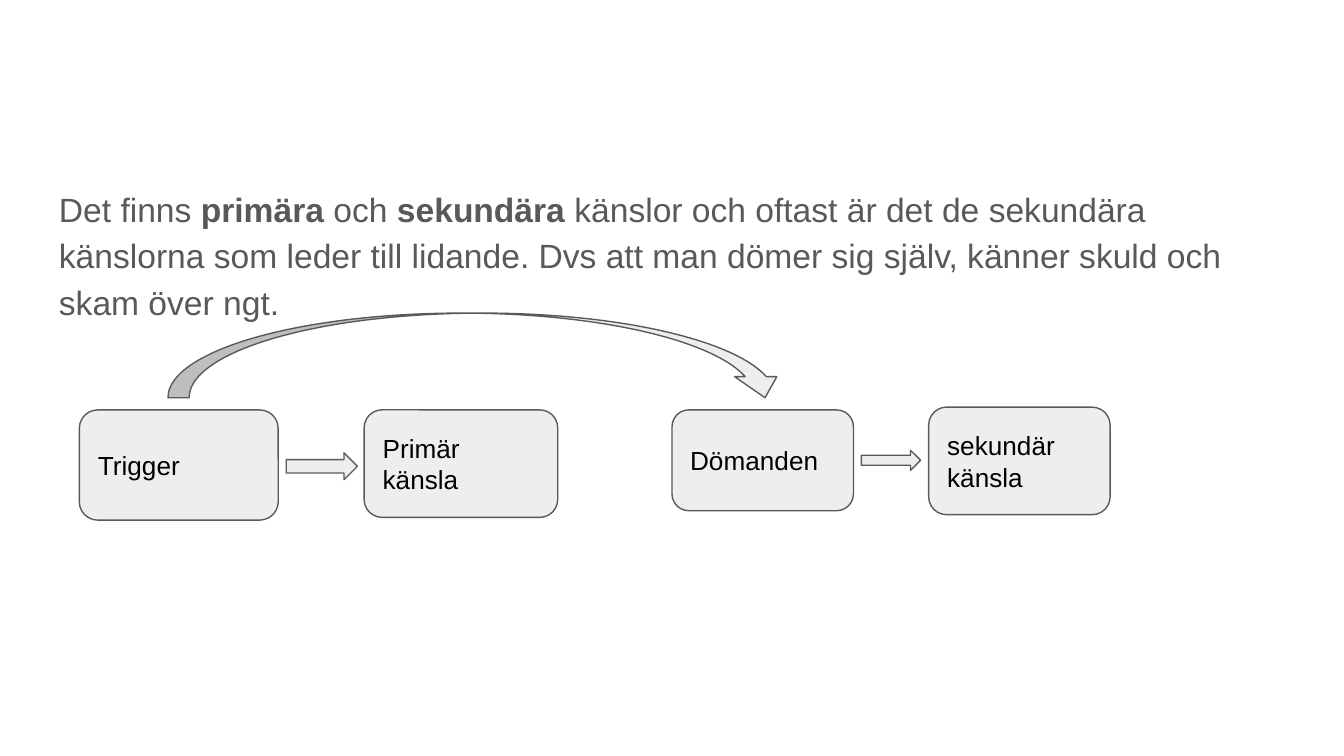
from pptx import Presentation
from pptx.dml.color import RGBColor
from pptx.enum import shapes, text
from pptx.util import Inches, Pt

GREY = RGBColor(0x59, 0x59, 0x59)
PALE = RGBColor(0xEE, 0xEE, 0xEE)
BLACK = RGBColor(0, 0, 0)
FONT = "Arial"

INTRO = [
    ("Det finns ", False),
    ("primära ", True),
    ("och ", False),
    ("sekundära ", True),
    ("känslor och oftast är det de sekundära känslorna som leder till lidande. "
     "Dvs att man dömer sig själv, känner skuld och skam över ngt.", False),
]
STEPS = [
    ("Trigger", 0.59, 3.05, 1.48, 0.82),
    ("Primär känsla", 2.71, 3.05, 1.44, 0.8),
    ("sekundär känsla", 6.91, 3.03, 1.35, 0.8),
    ("Dömanden", 5, 3.05, 1.35, 0.75),
]
ARROWS = [
    (shapes.MSO_SHAPE.RIGHT_ARROW, 2.13, 3.37, 0.53, 0.2),
    (shapes.MSO_SHAPE.RIGHT_ARROW, 6.41, 3.35, 0.44, 0.15),
    (shapes.MSO_SHAPE.CURVED_DOWN_ARROW, 1.25, 2.33, 4.6, 0.63),
]


def set_frame(frame, anchor):
    frame.word_wrap = True
    frame.vertical_anchor = anchor
    frame.margin_left = frame.margin_right = Inches(0.1)
    frame.margin_top = frame.margin_bottom = Inches(0.1)


def set_font(paragraph, size, color):
    paragraph.alignment = text.PP_ALIGN.LEFT
    paragraph.font.name = FONT
    paragraph.font.size = Pt(size)
    paragraph.font.color.rgb = color


def add_outlined(page, kind, *place):
    shape = page.shapes.add_shape(kind, *map(Inches, place))
    shape.shadow.inherit = False
    shape.fill.solid()
    shape.fill.fore_color.rgb = PALE
    shape.line.color.rgb = GREY
    shape.line.width = Pt(0.75)
    return shape


def add_step(page, label, *place):
    box = add_outlined(page, shapes.MSO_SHAPE.ROUNDED_RECTANGLE, *place)
    set_frame(box.text_frame, text.MSO_ANCHOR.MIDDLE)
    box.text_frame.text = label
    set_font(box.text_frame.paragraphs[0], 14, BLACK)


def add_intro(page, spans, *place):
    box = page.shapes.add_textbox(*map(Inches, place))
    set_frame(box.text_frame, text.MSO_ANCHOR.TOP)
    paragraph = box.text_frame.paragraphs[0]
    set_font(paragraph, 18, GREY)
    paragraph.line_spacing = 1.15
    paragraph.space_before = Pt(12)
    for words, bold in spans:
        span = paragraph.add_run()
        span.text = words
        span.font.bold = bold


def main():
    deck = Presentation()
    deck.slide_width = Inches(10)
    deck.slide_height = deck.slide_width * 9 // 16
    page = deck.slides.add_slide(deck.slide_layouts[6])
    add_intro(page, INTRO, 0.34, 1.26, 9.32, 3.74)
    for step in STEPS:
        add_step(page, *step)
    for arrow in ARROWS:
        add_outlined(page, *arrow)
    deck.save("out.pptx")


if __name__ == "__main__":
    main()
